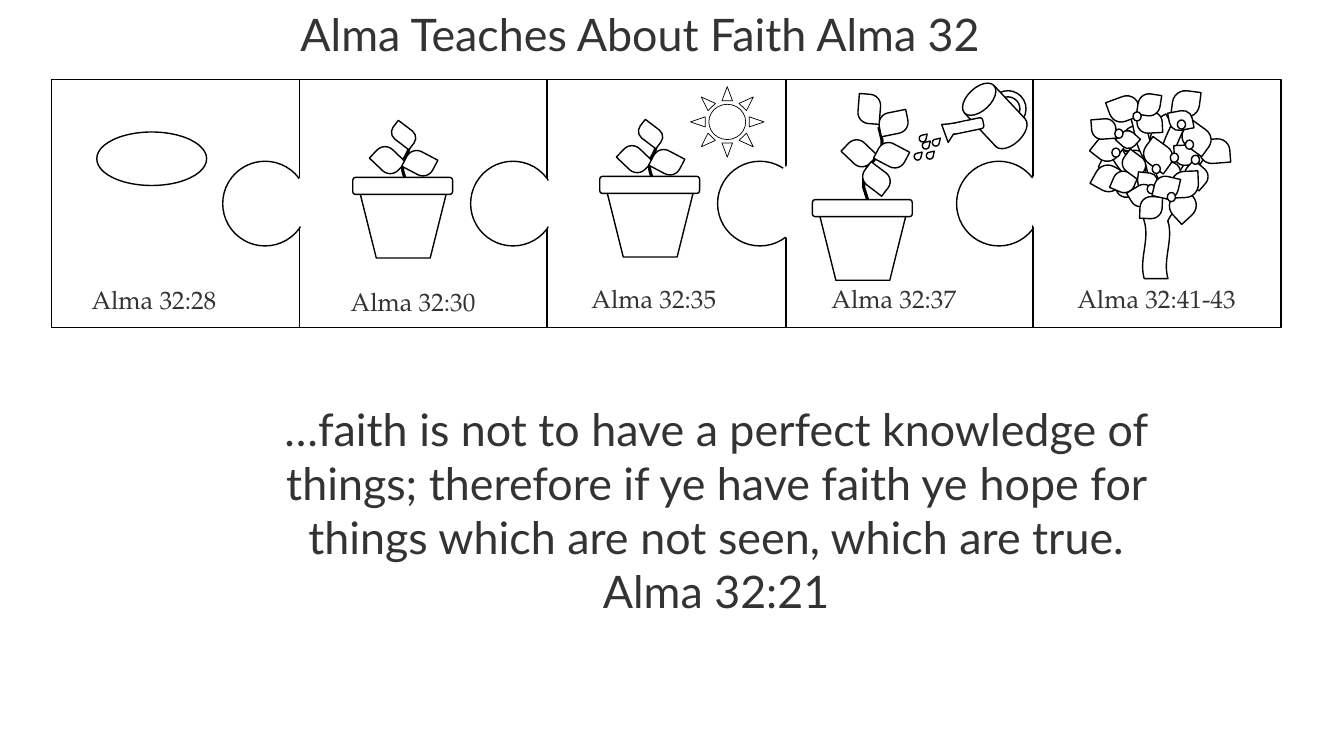
import pptx
import pptx.util
import pptx.dml.color
import pptx.enum.shapes
import pptx.enum.text

Pt = pptx.util.Pt
RGB = pptx.dml.color.RGBColor.from_string
SHAPE = pptx.enum.shapes.MSO_SHAPE
ALIGN = pptx.enum.text.PP_ALIGN
LEAF = SHAPE.ROUND_2_DIAG_RECTANGLE
COLORS = {"paper": "FFFFFF", "ink": "000000", "text": "333333"}

prs = pptx.Presentation()
prs.slide_width, prs.slide_height = Pt(960), Pt(540)
s = prs.slides.add_slide(prs.slide_layouts[5])


def write(sp, text, box, font="Lato", size=32, align=ALIGN.LEFT, wrap=False):
    sp.left, sp.top, sp.width, sp.height = [Pt(v) for v in box]
    tf = sp.text_frame
    tf.text = text
    tf.word_wrap = wrap
    tf.auto_size = pptx.enum.text.MSO_AUTO_SIZE.NONE
    tf.vertical_anchor = pptx.enum.text.MSO_ANCHOR.TOP
    for p in tf.paragraphs:
        p.alignment = align
        for r in p.runs:
            r.font.name, r.font.size = font, Pt(size)
            r.font.color.rgb = RGB(COLORS["text"])


def draw(parent, kind, x, y, w, h, rot=0, adj=(), line="ink", weight=1):
    sp = parent.shapes.add_shape(kind, Pt(x), Pt(y), Pt(w), Pt(h))
    sp.rotation = rot
    sp.shadow.inherit = False
    if kind == LEAF:
        adj = (0.5, 0)
    for i, value in enumerate(adj):
        sp.adjustments[i] = value
    sp.fill.solid()
    sp.fill.fore_color.rgb = RGB(COLORS["paper"])
    if line:
        sp.line.color.rgb = RGB(COLORS[line])
        sp.line.width = Pt(weight)
    else:
        sp.line.fill.background()


write(s.shapes.title, "Alma Teaches About Faith Alma 32", (207.4, 1.4, 560.9, 46.1))

PANEL, KNOB = 177.1, 60.5
puzzle = s.shapes.add_group_shape()
for kind, size, line, places in [
    (SHAPE.RECTANGLE, PANEL, "ink", [(213.8, 56.9), (391, 56.9), (36.7, 56.9)]),
    (SHAPE.OVAL, KNOB, "ink", [(159.1, 115.2), (336.2, 115.2), (512.6, 115.2)]),
    (SHAPE.RECTANGLE, PANEL, "ink", [(561.6, 56.9)]),
    (SHAPE.OVAL, KNOB, "ink", [(683.3, 115.2)]),
    (SHAPE.OVAL, KNOB, "paper", [(387.4, 115.2), (209.5, 113.8), (548.6, 113.8)]),
    (SHAPE.RECTANGLE, PANEL, "ink", [(738, 56.9)]),
    (SHAPE.OVAL, KNOB, "paper", [(733, 113.8)]),
]:
    for x, y in places:
        draw(puzzle, kind, x, y, size, size, line=line)

draw(s, SHAPE.OVAL, 69.1, 94.3, 78.5, 38.2)
draw(s, SHAPE.SUN, 493.2, 61.9, 52.6, 50.4, weight=0.5)

for verse, x, y, w in [
    ("28", 58.3, 199.4, 106.6),
    ("30", 243.4, 200.9, 106.6),
    ("35", 415.4, 198.7, 106.6),
    ("37", 586.8, 198.7, 106.6),
    ("41-43", 762.5, 198.7, 132.5),
]:
    tb = s.shapes.add_textbox(0, 0, 0, 0)
    write(tb, "Alma 32:" + verse, (x, y, w, 28.8), font="TeX Gyre Pagella", size=18)

can = s.shapes.add_group_shape()
draw(can, SHAPE.DONUT, 707, 64.8, 25.9, 25.9, 316.9, (0.169,))
draw(can, SHAPE.FLOWCHART_MAGNETIC_DISK, 696.2, 58.3, 28.8, 49, 316.9)
draw(can, SHAPE.ROUNDED_RECTANGLE, 685.4, 77, 7.9, 26.6, 258.2, (0.258,))
draw(can, SHAPE.ISOSCELES_TRIANGLE, 668.9, 86.4, 16.6, 10.8, 302.6)
draw(can, SHAPE.ROUNDED_RECTANGLE, 681.8, 84.2, 6.5, 13.7, 258.2, (0.258,), None)
for x, y in [(658.8, 101.5), (666, 99.4), (656.6, 96.5), (653, 109.4), (661.7, 108.7)]:
    draw(can, SHAPE.TEAR, x, y, 5, 5, adj=(1.286,))

SPROUT = {
    "low": [(14.4, -20.2, 20.9, 15.8, 43.7), (37.4, -18, 20.9, 15.8, 27.8)],
    "stem": [(38.2, 9.4), (38.9, 7.2), (38.2, 3.6), (36, -3.6), (35.3, -7.9), (36, -8.6),
             (36.7, -13), (38.2, -15.8), (39.6, -18.7), (40.3, -21.6), (40.3, -24.5),
             (38.9, -30.2)],
    "high": [(30.2, -39.6, 12.2, 18.7, 307.3)],
}
TALL = {
    "low": [(23, -41, 20.9, 15.8, 43.7), (46.1, -39.6, 20.9, 15.8, 27.8)],
    "stem": [(38.9, 12.2), (40.3, 7.9), (40.3, 2.9), (36.7, -8.6), (36.7, -15.1),
             (37.4, -16.6), (39.6, -23.8), (43.9, -28.1), (46.8, -33.1), (49.7, -38.2),
             (49.7, -42.5), (47.5, -51.8)],
    "high": [(38.2, -25.2, 15.1, 20.9, 307.3), (47.5, -62.6, 20.9, 15.8, 348.6),
             (30.2, -72.7, 20.9, 15.8, 274.6)],
}
for left, top, plant in [(252, 126.7, SPROUT), (428.4, 126, SPROUT), (580.3, 142.6, TALL)]:
    g = s.shapes.add_group_shape()
    points = [(Pt(left + x), Pt(top + y)) for x, y in plant["stem"]]
    fb = g.shapes.build_freeform(*points[0])
    fb.add_line_segments(points[1:], close=False)
    stem = fb.convert_to_shape()
    stem.shadow.inherit = False
    stem.fill.background()
    stem.line.color.rgb = RGB(COLORS["ink"])
    stem.line.width = Pt(2.25)
    for x, y, w, h, rot in plant["low"]:
        draw(g, LEAF, left + x, top + y, w, h, rot)
    draw(g, SHAPE.TRAPEZOID, left + 2.9, top + 2.2, 66.2, 55.4, 180)
    draw(g, SHAPE.ROUNDED_RECTANGLE, left, top, 71.3, 12.2)
    for x, y, w, h, rot in plant["high"]:
        draw(g, LEAF, left + x, top + y, w, h, rot)

tree = s.shapes.add_group_shape()
BUD = (5.8, 6.5)
for kind, line, rows in [
    (LEAF, "ink", [
        (833.8, 94.3, 17.3, 21.6, 85.5), (819.4, 85, 19.4, 18.7, 329.9),
        (802.1, 90, 19.4, 18.7, 10.4), (802.8, 107.3, 15.8, 15.8, 15.3),
        (787.7, 105.8, 19.4, 18.7, 26.4), (781.9, 118.1, 19.4, 18.7, 28.9),
        (798.5, 124.6, 14.4, 17.3, 71.7)]),
    (SHAPE.DOUBLE_WAVE, "ink", [
        (784.8, 148.3, 82.1, 19.4, 270), (771.8, 115.2, 68.4, 10.8, 235.5),
        (809.3, 126.7, 68.4, 10.8, 298.7), (799.9, 104.4, 68.4, 10.8, 289.4),
        (785.5, 103, 68.4, 10.8, 252.4)]),
    (SHAPE.OVAL, None, [(820.1, 130.3, 13.7, 48.2)]),
    (LEAF, "ink", [
        (781.9, 97.2, 18, 18, 38.2), (837.4, 64.8, 19.4, 18.7, 187.3),
        (794.2, 67, 17.3, 21.6, 69.8), (799.2, 93.6, 13, 12.2, 42.2),
        (781.2, 83.5, 14.4, 17.3, 85.5), (813.6, 78.5, 15.1, 18, 87.1),
        (794.9, 122.4, 15.8, 15.1, 22.8), (802.8, 108.7, 14.4, 17.3, 126.4),
        (827.3, 114.5, 14.4, 17.3, 87.1), (818.6, 100.1, 17.3, 21.6, 126),
        (812.9, 67, 15.8, 15.8, 8.9), (840.2, 102.2, 14.4, 17.3, 87.1),
        (859, 97.2, 17.3, 21.6, 85.5), (846, 87.8, 17.3, 21.6, 126),
        (836.6, 77.8, 13.7, 16.6, 79.4), (847.4, 116.6, 14.4, 17.3, 130.9)]),
    (SHAPE.OVAL, "ink", [
        (794.2, 105.8, *BUD), (851, 110.9, *BUD), (846.7, 100.1, *BUD), (796.3, 92.2, *BUD),
        (809.3, 79.9, *BUD), (841, 85.7, *BUD), (823, 117.4, *BUD), (835.9, 109.4, *BUD)]),
    (LEAF, "ink", [(813.6, 122.4, 12.2, 14.4, 276.1), (808.6, 131, 14.4, 17.3, 238.6)]),
    (SHAPE.OVAL, "ink", [(819.4, 131.8, *BUD)]),
    (LEAF, "ink", [
        (835.2, 137.5, 19.4, 18.7, 137.2), (836.6, 122.4, 19.4, 18.7, 177.7),
        (814.3, 140.4, 15.8, 15.8, 182.6), (824.4, 126, 17.3, 15.8, 193.2)]),
    (SHAPE.OVAL, "ink", [(833.8, 137.5, *BUD)]),
]:
    for row in rows:
        draw(tree, kind, *row, line=line)

quote = ("…faith\u00a0is not to have a perfect knowledge of things; therefore if ye have faith "
         "ye\u00a0hope\u00a0for things which are\u00a0not\u00a0seen, which are true.\nAlma 32:21")
write(s.shapes.add_textbox(0, 0, 0, 0), quote, (189.4, 283.7, 644.4, 200.9),
      align=ALIGN.CENTER, wrap=True)

prs.save("out.pptx")
